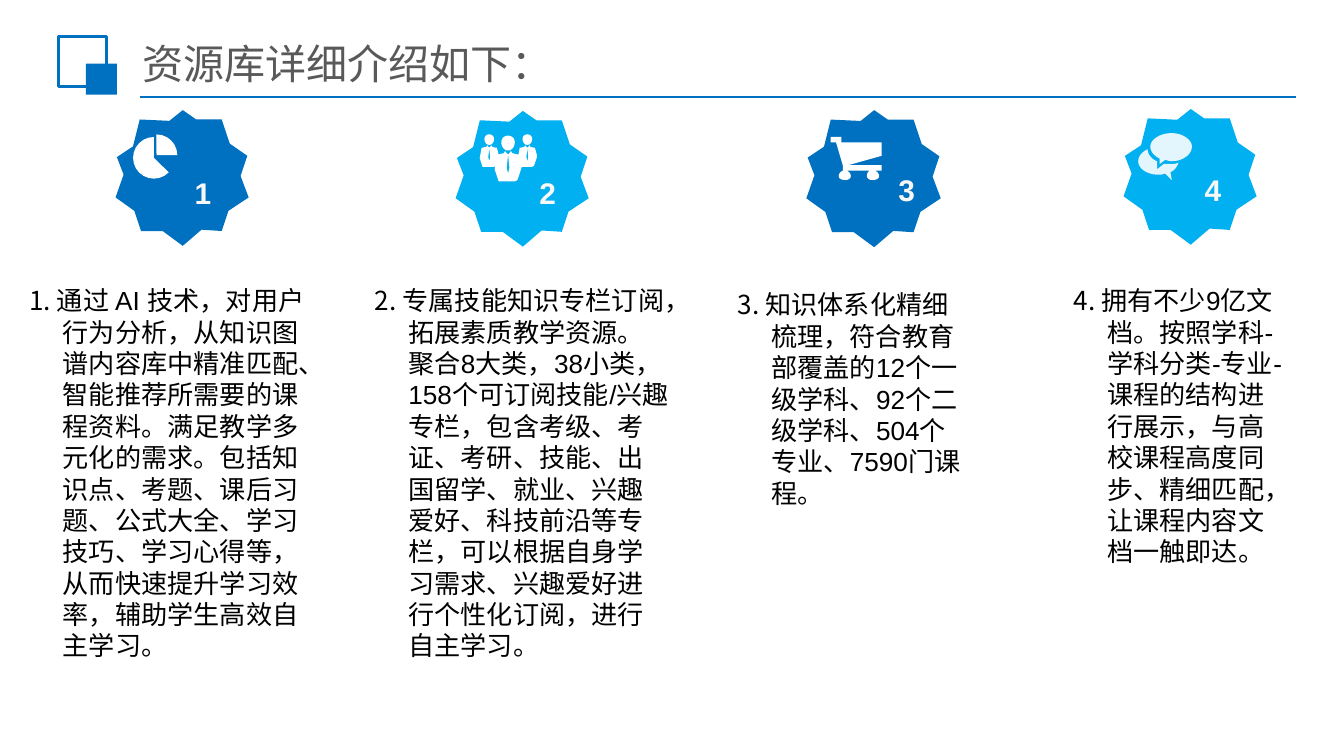
import pptx
import pptx.util
from dataclasses import dataclass
from lxml import etree
from pptx.dml.color import RGBColor
from pptx.enum.shapes import MSO_CONNECTOR, MSO_SHAPE
from pptx.enum.text import MSO_ANCHOR, MSO_AUTO_SIZE, PP_ALIGN
from pptx.oxml.ns import qn

Pt = pptx.util.Pt


@dataclass(frozen=True)
class Theme:
    blue: str = "0070C0"
    sky: str = "00B0F0"
    white: str = "FFFFFF"
    badge_text: str = "F8F8F8"
    heading: str = "595959"
    body: str = "000000"
    font: str = "Arial"
    number_font: str = "Noto Sans CJK SC"
    title_size: int = 22
    badge_size: int = 16
    body_size: int = 14


# Outlines on a grid of 0.72 pt: pairs are corners, sixes are Bézier curves
GRID = 0.72
STAR = [[(50, 0), (60, 7), (79, 7), (85, 25), (98, 34), (93, 49), (99, 65),
         (84, 75), (79, 90), (64, 89), (50, 101), (35, 90), (19, 90), (14, 75),
         (0, 65), (6, 48), (1, 35), (13, 27), (18, 7), (40, 8)]]
PERSON = [
    [(8, 11), (8, 12), (10, 14), (9, 24), (10, 28), (11, 24), (10, 14), (12, 12),
     (12, 11), (13, 13), (17, 14), (18, 14), (20, 22), (20, 24), (17, 33),
     (15, 34), (5, 34), (3, 34), (0, 25), (2, 14), (3, 14), (7, 13)],
    [(10, 0), (13, 0, 15, 2, 15, 5), (15, 8, 13, 11, 10, 11),
     (7, 11, 5, 8, 5, 5), (5, 2, 7, 0, 10, 0)]]
CART = [[(0, 0), (8, 0), (8, 4), (38, 4), (38, 14), (13, 21), (38, 21), (38, 25),
         (32, 25), (34, 25, 36, 27, 36, 29), (36, 31, 34, 32, 31, 32),
         (29, 32, 27, 31, 27, 29), (27, 27, 28, 25, 30, 25), (11, 25),
         (13, 25, 15, 27, 15, 29), (15, 31, 13, 32, 11, 32),
         (8, 32, 6, 31, 6, 29), (6, 27, 8, 25, 10, 25), (9, 25), (9, 21),
         (4, 4), (0, 4)]]
BUBBLES = [
    [(19, 23), (14, 27), (14, 21), (9, 19, 7, 15, 7, 12), (3, 14, 0, 17, 0, 21),
     (0, 26, 6, 31, 15, 31), (17, 31, 18, 31, 20, 30), (25, 35), (24, 29),
     (27, 28, 29, 25, 30, 22), (28, 23, 26, 23, 24, 23)],
    [(25, 0), (16, 0, 9, 5, 9, 10), (9, 14, 12, 17, 16, 19), (16, 23), (20, 20),
     (21, 20, 23, 21, 25, 21), (33, 21, 40, 16, 40, 10), (40, 5, 33, 0, 25, 0)]]


def flatten(contour, steps=8):
    """Turn corners and curves into a list of corners."""
    points = [contour[0]]
    for part in contour[1:]:
        if len(part) == 2:
            points.append(part)
            continue
        x0, y0 = points[-1]
        x1, y1, x2, y2, x3, y3 = part
        for step in range(1, steps + 1):
            t = step / steps
            a, b, c, d = (1 - t) ** 3, 3 * t * (1 - t) ** 2, 3 * t * t * (1 - t), t ** 3
            points.append((a * x0 + b * x1 + c * x2 + d * x3,
                           a * y0 + b * y1 + c * y2 + d * y3))
    return points


class SlidePainter:
    def __init__(self, slide, theme):
        self.shapes = slide.shapes
        self.theme = theme

    def paint(self, shape, fill=None, line=None, alpha=None):
        shape.shadow.inherit = False
        if fill:
            shape.fill.solid()
            shape.fill.fore_color.rgb = RGBColor.from_string(fill)
        else:
            shape.fill.background()
        if line:
            shape.line.color.rgb = RGBColor.from_string(line)
            shape.line.width = Pt(1.5)
        else:
            shape.line.fill.background()
        if alpha:
            color = shape.fill._xPr.find(".//" + qn("a:srgbClr"))
            etree.SubElement(color, qn("a:alpha"), val=str(alpha * 1000))

    def preset(self, kind, left, top, width, height, angles=(), **paint):
        shape = self.shapes.add_shape(kind, Pt(left), Pt(top), Pt(width), Pt(height))
        for index, degrees in enumerate(angles):
            shape.adjustments[index] = degrees * 0.6
        self.paint(shape, **paint)

    def outline(self, contours, left, top, fill, scale=1, alpha=None):
        unit = GRID * scale
        builder = None
        for contour in contours:
            points = [(Pt(left + x * unit), Pt(top + y * unit)) for x, y in flatten(contour)]
            if builder is None:
                builder = self.shapes.build_freeform(*points[0], scale=1.0)
            else:
                builder.move_to(*points[0])
            builder.add_line_segments(points[1:], close=True)
        self.paint(builder.convert_to_shape(), fill=fill, alpha=alpha)

    def rule(self, left, right, y):
        rule = self.shapes.add_connector(MSO_CONNECTOR.STRAIGHT, Pt(left), Pt(y), Pt(right), Pt(y))
        rule.line.color.rgb = RGBColor.from_string(self.theme.blue)
        rule.line.width = Pt(1.25)
        etree.SubElement(rule._element.spPr, qn("a:effectLst"))

    def text(self, left, top, width, height, runs, size, color, bold=False,
             align=PP_ALIGN.LEFT, hanging=0):
        """Write (text, font name) runs as one paragraph."""
        box = self.shapes.add_textbox(Pt(left), Pt(top), Pt(width), Pt(height))
        frame = box.text_frame
        frame.word_wrap = True
        frame.auto_size = MSO_AUTO_SIZE.SHAPE_TO_FIT_TEXT
        paragraph = frame.paragraphs[0]
        paragraph.alignment = align
        if hanging:
            properties = paragraph._p.get_or_add_pPr()
            properties.set("marL", str(Pt(hanging)))
            properties.set("indent", str(-Pt(hanging)))
        paragraph.font.size = Pt(size)
        paragraph.font.bold = bold
        paragraph.font.color.rgb = RGBColor.from_string(color)
        if len(runs) == 1:
            paragraph.font.name = runs[0][1]
        for words, font in runs:
            run = paragraph.add_run()
            run.text = words
            if len(runs) > 1:
                run.font.name = font
        return frame


# Per column: star (left, top, scale), badge (left, top, width), body (left, top, width, height), text
COLUMNS = [
    ((61.9, 59, 1), (59.8, 90, 97.9), (8.6, 149, 169.9, 211),
     "通过 AI 技术，对用户行为分析，从知识图谱内容库中精准匹配、智能推荐所需要的课程资料。满足教学多元化的需求。包括知识点、考题、课后习题、公式大全、学习技巧、学习心得等，从而快速提升学习效率，辅助学生高效自主学习。"),
    ((244.1, 59.4, 1), (249.1, 90, 88.6), (193.7, 149, 172.1, 211),
     "专属技能知识专栏订阅，拓展素质教学资源。聚合8大类，38小类，158个可订阅技能/兴趣专栏，包含考级、考证、考研、技能、出国留学、就业、兴趣爱好、科技前沿等专栏，可以根据自身学习需求、兴趣爱好进行个性化订阅，进行自主学习。"),
    ((432, 59, 1.01), (441.4, 88.6, 88.6), (388.1, 151.2, 136.8, 126),
     "知识体系化精细梳理，符合教育部覆盖的12个一级学科、92个二级学科、504个专业、7590门课程。"),
    ((601.9, 58.4, 1), (605.5, 88.6, 88.6), (568.1, 149, 126, 177.1),
     "拥有不少9亿文档。按照学科-学科分类-专业-课程的结构进行展示，与高校课程高度同步、精细匹配，让课程内容文档一触即达。"),
]


def main():
    theme = Theme()
    deck = pptx.Presentation()
    deck.slide_width, deck.slide_height = Pt(720), Pt(405)
    painter = SlidePainter(deck.slides.add_slide(deck.slide_layouts[6]), theme)

    # Heading with its square mark and rule
    painter.rule(74.9, 694.1, 51.8)
    painter.preset(MSO_SHAPE.RECTANGLE, 31.2, 19.7, 25.9, 26.6, line=theme.blue)
    painter.preset(MSO_SHAPE.RECTANGLE, 46.1, 34.1, 16.6, 16.6, fill=theme.blue)
    title = painter.text(71.3, 20.9, 464.4, 25.9, [("资源库详细介绍如下：", theme.font)],
                         theme.title_size, theme.heading)
    title.auto_size = MSO_AUTO_SIZE.NONE
    title.vertical_anchor = MSO_ANCHOR.MIDDLE
    title.margin_left = title.margin_right = Pt(5.3)
    title.margin_top = title.margin_bottom = Pt(2.6)

    # Stars in alternating colours
    for index, ((left, top, scale), *_) in enumerate(COLUMNS):
        painter.outline(STAR, left, top, (theme.blue, theme.sky)[index % 2], scale)

    # Icons: pie, people, cart, speech bubbles
    for left, top, angles in ((71.3, 73.4, (44.48, 270)), (72.7, 72, (269.47, 360))):
        painter.preset(MSO_SHAPE.PIE, left, top, 22.3, 22.3, angles, fill=theme.white)
    for left, top, scale in ((265, 72.7, 1), (257, 72, 0.71), (277.4, 72, 0.71)):
        painter.outline(PERSON, left, top, theme.white, scale)
    painter.outline(CART, 445, 73.4, theme.white)
    painter.outline(BUBBLES, 609.8, 71.3, theme.white, alpha=89)

    # Badge numbers and numbered descriptions
    for number, (_, badge, body, words) in enumerate(COLUMNS, 1):
        painter.text(*badge, 26.6, [(str(number), theme.font)], theme.badge_size,
                     theme.badge_text, bold=True, align=PP_ALIGN.CENTER)
        painter.text(*body, [(f"{number}. ", theme.number_font), (words, theme.font)],
                     theme.body_size, theme.body, hanging=18)

    deck.save("out.pptx")


if __name__ == "__main__":
    main()
